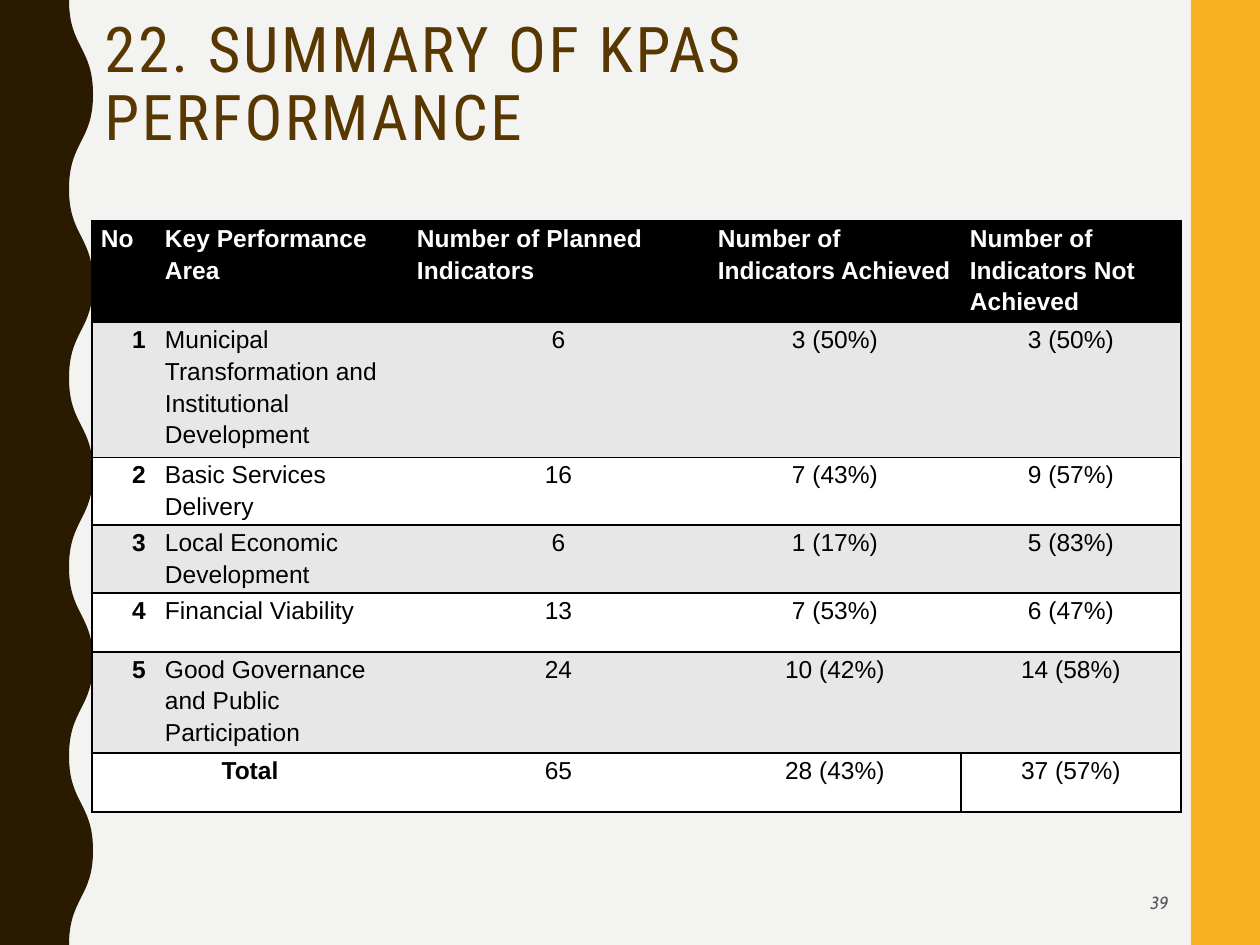
import pptx
import pptx.dml.color
import pptx.enum.shapes
import pptx.enum.text
import pptx.oxml.ns
import pptx.util
from lxml import etree

RGB = pptx.dml.color.RGBColor
ALIGN = pptx.enum.text.PP_ALIGN
ANCHOR = pptx.enum.text.MSO_ANCHOR
qn = pptx.oxml.ns.qn

PAPER = RGB(0xF3, 0xF3, 0xF2)
GOLD = RGB(0xF8, 0xB3, 0x23)
DARK_BROWN = RGB(0x2A, 0x1A, 0x00)
TITLE_BROWN = RGB(0x59, 0x37, 0x00)
GREY_TEXT = RGB(0x59, 0x59, 0x59)
BAND = RGB(0xE7, 0xE7, 0xE7)
BLACK = RGB(0, 0, 0)
WHITE = RGB(0xFF, 0xFF, 0xFF)

PX_PER_INCH = 126
WIDTH, HEIGHT = 1260, 945

HEADER = ["No", "Key Performance Area", "Number of Planned Indicators",
          "Number of Indicators Achieved", "Number of Indicators Not Achieved"]
AREAS = [
    ["1", "Municipal Transformation and Institutional Development",
     "6", "3 (50%)", "3 (50%)"],
    ["2", "Basic Services Delivery", "16", "7 (43%)", "9 (57%)"],
    ["3", "Local Economic Development", "6", "1 (17%)", "5 (83%)"],
    ["4", "Financial Viability", "13", "7 (53%)", "6 (47%)"],
    ["5", "Good Governance and Public Participation",
     "24", "10 (42%)", "14 (58%)"],
]
TOTAL = ["Total", "", "65", "28 (43%)", "37 (57%)"]
COLUMN_WIDTHS = [64, 252, 301, 252, 220]
ROW_HEIGHTS = [94, 62, 57, 59, 59, 95, 59]


def px(n):
    return pptx.util.Emu(round(n * 914400 / PX_PER_INCH))


class Deck:
    """Holds the style and the current slide."""

    title_font, table_font, number_font = "Roboto Condensed", "Arial", "Cabin"

    def __init__(self):
        self.prs = pptx.Presentation()
        self.prs.slide_width, self.prs.slide_height = px(WIDTH), px(HEIGHT)
        self.s = self.prs.slides.add_slide(self.prs.slide_layouts[6])
        self.s.background.fill.solid()
        self.s.background.fill.fore_color.rgb = PAPER

    def paint(self, sp, color):
        sp.shadow.inherit = False
        sp.fill.solid()
        sp.fill.fore_color.rgb = color
        sp.line.fill.background()

    def bar(self, x, y, w, h, color):
        sp = self.s.shapes.add_shape(
            pptx.enum.shapes.MSO_SHAPE.RECTANGLE, px(x), px(y), px(w), px(h))
        self.paint(sp, color)

    def wave(self, trough, crest, halves, color):
        """Left band whose right edge swings between trough and crest."""
        knots = [(px(crest if i % 2 else trough), px(HEIGHT * i / halves))
                 for i in range(halves + 1)]
        builder = self.s.shapes.build_freeform(*knots[0])
        builder.add_line_segments(knots[1:] + [(0, px(HEIGHT)), (0, 0)])
        sp = builder.convert_to_shape()
        self.paint(sp, color)

        # Bend the edge segments into S curves
        x0, y0 = knots[0]
        lines = list(sp._element.iter(qn("a:lnTo")))
        for line, (x, y) in zip(lines, knots[1:]):
            middle = (y0 + y) // 2
            curve = etree.Element(qn("a:cubicBezTo"))
            for cx, cy in [(x0, middle), (x, middle), (x, y)]:
                etree.SubElement(curve, qn("a:pt"), x=str(cx), y=str(cy))
            line.getparent().replace(line, curve)
            x0, y0 = x, y

    def text(self, x, y, w, h, words, font, size, color, align=ALIGN.LEFT,
             anchor=ANCHOR.TOP, italic=False, line_spacing=None, tracking=0):
        tf = self.s.shapes.add_textbox(px(x), px(y), px(w), px(h)).text_frame
        tf.word_wrap = True
        tf.vertical_anchor = anchor
        tf.text = words
        p = tf.paragraphs[0]
        p.alignment, p.line_spacing = align, line_spacing
        r = p.runs[0]
        r.font.name, r.font.size = font, pptx.util.Pt(size)
        r.font.color.rgb, r.font.italic = color, italic
        if tracking:
            r.font._element.set("spc", str(tracking))

    def borders(self, cell, visible):
        tc_pr = cell._tc.get_or_add_tcPr()
        for side in "LRTB":
            ln = etree.SubElement(tc_pr, qn(f"a:ln{side}"), w="12700")
            if side in visible:
                fill = etree.SubElement(ln, qn("a:solidFill"))
                etree.SubElement(fill, qn("a:srgbClr"), val=str(BLACK))
            else:
                etree.SubElement(ln, qn("a:noFill"))

    def cell(self, cell, words, fill, color, bold, align, visible, indent=0):
        self.borders(cell, visible)
        cell.fill.solid()
        cell.fill.fore_color.rgb = fill
        cell.margin_left = cell.margin_right = px(9)
        cell.margin_top = cell.margin_bottom = 0
        if not words:
            return
        cell.text = words
        p = cell.text_frame.paragraphs[0]
        p.alignment, p.line_spacing = align, 1.15
        p.space_after = pptx.util.Pt(10)
        if indent:
            p._p.get_or_add_pPr().set("marL", str(px(indent)))
        r = p.runs[0]
        r.font.name, r.font.size = self.table_font, pptx.util.Pt(14)
        r.font.bold, r.font.color.rgb = bold, color

    def table(self, x, y, rows, widths, heights):
        table = self.s.shapes.add_table(
            len(rows), len(widths), px(x), px(y),
            px(sum(widths)), px(sum(heights))).table
        table.first_row = table.horz_banding = False
        for column, width in zip(table.columns, widths):
            column.width = px(width)
        for row, height in zip(table.rows, heights):
            row.height = px(height)

        last_row, last_col = len(rows) - 1, len(widths) - 1
        for i, row in enumerate(rows):
            header, total = i == 0, i == last_row
            fill = BLACK if header else BAND if i % 2 else WHITE
            for j, words in enumerate(row):
                visible = "TB"
                if j == 0 or (total and j == last_col):
                    visible += "L"
                if j == last_col or (total and j == last_col - 1):
                    visible += "R"
                centred = not header and (j > 1 or total)
                self.cell(
                    table.cell(i, j), words, fill,
                    color=WHITE if header else BLACK,
                    bold=header or j == 0,
                    align=ALIGN.CENTER if centred else ALIGN.LEFT,
                    visible=visible,
                    indent=31 if j == 0 and not header and not total else 0)
        table.cell(last_row, 0).merge(table.cell(last_row, 1))


def main():
    deck = Deck()

    # Side decoration
    deck.bar(1191, 0, 69, HEIGHT, GOLD)
    deck.wave(69, 93, 10, DARK_BROWN)

    # Title and slide number
    deck.text(92, 12, 1052, 123, "22. SUMMARY OF KPAS PERFORMANCE",
              deck.title_font, 36, TITLE_BROWN, line_spacing=0.9, tracking=150)
    deck.text(890, 879, 291, 48, "39", deck.number_font, 10, GREY_TEXT,
              align=ALIGN.RIGHT, anchor=ANCHOR.MIDDLE, italic=True)

    # Performance table
    deck.table(92, 221, [HEADER, *AREAS, TOTAL], COLUMN_WIDTHS, ROW_HEIGHTS)

    deck.prs.save("out.pptx")


if __name__ == "__main__":
    main()
